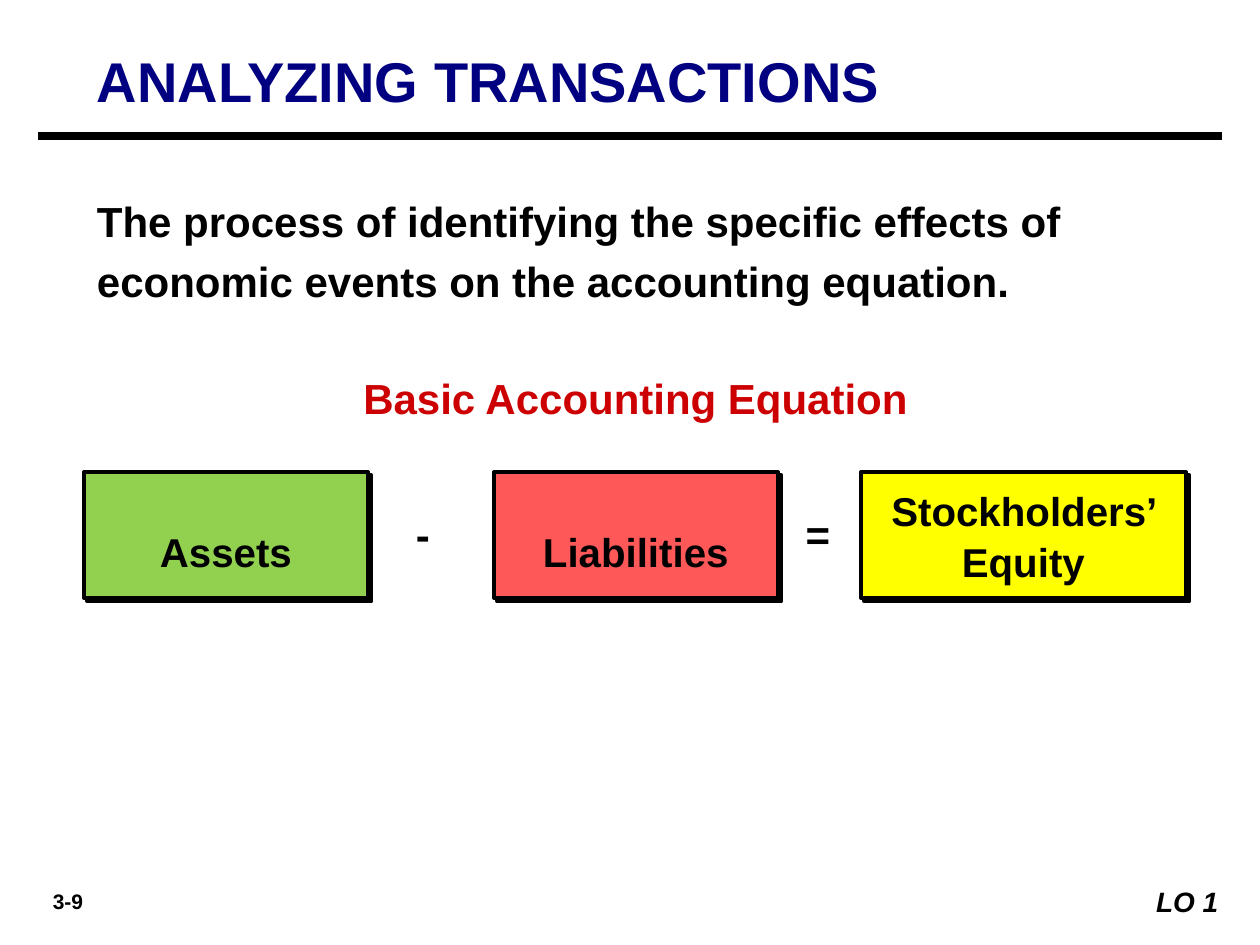
from lxml import etree
from pptx import Presentation
from pptx import util as u
from pptx.dml.color import RGBColor
from pptx.enum import shapes, text
from pptx.oxml.ns import qn

PX_PER_INCH = 126
COLORS = {
    "black": "000000", "white": "FFFFFF", "navy": "000080", "red": "CC0000",
    "assets": "92D050", "liabilities": "FF5858", "equity": "FFFF00",
}
LEFT, CENTER, RIGHT = text.PP_ALIGN.LEFT, text.PP_ALIGN.CENTER, text.PP_ALIGN.RIGHT
TOP, MIDDLE = text.MSO_ANCHOR.TOP, text.MSO_ANCHOR.MIDDLE


def px(value):
    return round(value * u.Inches(1) / PX_PER_INCH)


def color(name):
    return RGBColor.from_string(COLORS[name])


def set_all(target, values):
    for name, value in values.items():
        setattr(target, name, value)


def place(shape, box):
    set_all(shape, dict(zip(("left", "top", "width", "height"), map(px, box))))


def write(shape, words, size, tint="black", align=LEFT, anchor=TOP,
          spacing=1.0, before=0, side=13, italic=False):
    frame = shape.text_frame
    set_all(frame, {
        "word_wrap": True, "auto_size": text.MSO_AUTO_SIZE.NONE,
        "vertical_anchor": anchor, "margin_left": px(side), "margin_right": px(side),
        "margin_top": px(6), "margin_bottom": px(6),
    })
    paragraph = frame.paragraphs[0]
    set_all(paragraph, {"alignment": align, "line_spacing": spacing,
                        "space_before": u.Pt(before)})
    run = paragraph.add_run()
    run.text = words
    set_all(run.font, {"name": "Arial", "size": u.Pt(size), "bold": True, "italic": italic})
    run.font.color.rgb = color(tint)


def add_title(slide, box, words):
    title = slide.shapes.title
    place(title, box)
    write(title, words, 32, "navy", anchor=MIDDLE)


def add_text(slide, box, words, size, **style):
    shape = slide.shapes.add_textbox(*map(px, box))
    write(shape, words, size, **style)


def add_hard_shadow(shape):
    effects = etree.SubElement(shape._element.spPr, qn("a:effectLst"))
    shadow = etree.SubElement(effects, qn("a:outerShdw"), dist=str(u.Pt(2.8)),
                              dir="2700000", algn="ctr", rotWithShape="0")
    etree.SubElement(shadow, qn("a:srgbClr"), val=COLORS["black"])


def add_term(slide, left, width, words, fill, spacing):
    shape = slide.shapes.add_shape(shapes.MSO_SHAPE.RECTANGLE,
                                   *map(px, (left, 472, width, 126)))
    shape.fill.solid()
    shape.fill.fore_color.rgb = color(fill)
    shape.line.color.rgb = color("black")
    shape.line.width = u.Pt(2.25)
    add_hard_shadow(shape)
    write(shape, words, 23, align=CENTER, anchor=MIDDLE, spacing=spacing, side=25)


def add_rule(slide, left, right, y):
    rule = slide.shapes.add_connector(shapes.MSO_CONNECTOR.STRAIGHT,
                                      px(left), px(y), px(right), px(y))
    rule.line.color.rgb = color("black")
    rule.line.width = u.Pt(4.5)
    etree.SubElement(rule._element.spPr, qn("a:effectLst"))


def add_objective(slide, box, words):
    shape = slide.shapes.add_shape(shapes.MSO_SHAPE.RECTANGLE, *map(px, box))
    shape.shadow.inherit = False
    shape.fill.solid()
    shape.fill.fore_color.rgb = color("white")
    shape.line.fill.background()
    write(shape, words, 16, align=RIGHT, anchor=MIDDLE, italic=True)


def main():
    presentation = Presentation()
    set_all(presentation, {"slide_width": u.Inches(10), "slide_height": u.Inches(7.5)})
    slide = presentation.slides.add_slide(presentation.slide_layouts[5])

    add_title(slide, (84, 42, 1134, 77), "ANALYZING TRANSACTIONS")
    add_rule(slide, 42 - 4, 1222, 136)
    add_text(slide, (84, 179, 1103, 126),
             "The process of identifying the specific effects of economic events "
             "on the accounting equation.", 24, spacing=1.2, before=6)
    add_text(slide, (84, 357, 1103, 73), "Basic Accounting Equation", 24,
             tint="red", align=CENTER, anchor=MIDDLE, spacing=1.15, before=3)

    for left, width, words, fill, spacing in (
        (84, 284, "Assets", "assets", 1.7),
        (494, 284, "Liabilities", "liabilities", 1.7),
        (861, 325, "Stockholders’ Equity", "equity", 1.05),
    ):
        add_term(slide, left, width, words, fill, spacing)
    for left, sign, align in ((403, "-", LEFT), (788, "=", CENTER)):
        add_text(slide, (left, 503, 60, 63), sign, 24, align=align, before=1)

    add_text(slide, (10, 882, 116, 38), "3-9", 12, align=CENTER, anchor=MIDDLE)
    add_objective(slide, (1134, 878, 105, 47), "LO 1 ")
    presentation.save("out.pptx")


if __name__ == "__main__":
    main()
